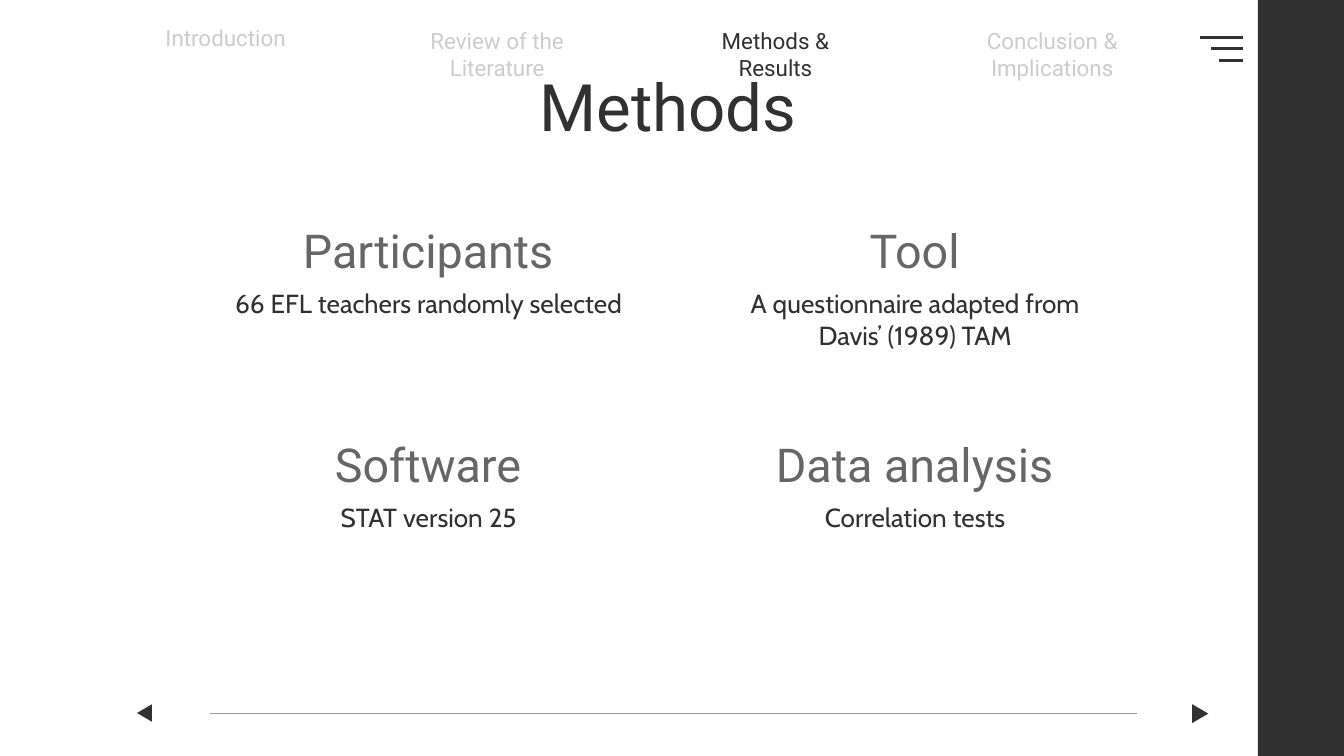
from dataclasses import dataclass

from lxml import etree
from pptx import Presentation
from pptx.dml.color import RGBColor
from pptx.enum.shapes import MSO_CONNECTOR, MSO_SHAPE
from pptx.enum.text import MSO_ANCHOR, PP_ALIGN
from pptx.oxml.ns import qn
from pptx.util import Inches, Pt

STRAIGHT = MSO_CONNECTOR.STRAIGHT
RECT, TRIANGLE = MSO_SHAPE.RECTANGLE, MSO_SHAPE.ISOSCELES_TRIANGLE
TOP, MIDDLE = MSO_ANCHOR.TOP, MSO_ANCHOR.MIDDLE
CENTER = PP_ALIGN.CENTER

SLIDE_W = 10
SLIDE_H = SLIDE_W * 9 / 16

DARK = RGBColor(0x31, 0x31, 0x31)
GRAY = RGBColor(0x66, 0x66, 0x66)
RULE = RGBColor(0x99, 0x99, 0x99)
PALE = RGBColor(0xCC, 0xCC, 0xCC)
WHITE = RGBColor(0xFF, 0xFF, 0xFF)
HEAD_FONT, BODY_FONT = "Roboto", "Cabin"


@dataclass
class Style:
    font: str
    size: float
    color: RGBColor
    anchor: MSO_ANCHOR = TOP
    inset: float = 0.1


@dataclass
class Topic:
    heading: str
    detail: str


@dataclass
class NavItem:
    label: str
    left: float
    top: float = 0.1
    active: bool = False


TITLE = Style(HEAD_FONT, 35, DARK)
HEADING = Style(HEAD_FONT, 25, GRAY, MIDDLE, 0)
DETAIL = Style(BODY_FONT, 14, DARK)
NAV = Style(HEAD_FONT, 12, PALE)
NAV_ACTIVE = Style(HEAD_FONT, 12, DARK)

TOPICS = [
    Topic("Participants", "66 EFL teachers randomly selected"),
    Topic("Tool", "A questionnaire adapted from Davis’ (1989) TAM"),
    Topic("Software", "STAT version 25"),
    Topic("Data analysis", "Correlation tests"),
]
NAV_ITEMS = [
    NavItem("Introduction", 0.9, 0.08),
    NavItem("Review of the Literature", 2.92),
    NavItem("Methods & Results", 4.99, active=True),
    NavItem("Conclusion & Implications", 7.05),
]


def add_text(s, text: str, x: float, y: float, w: float, h: float, style: Style) -> None:
    tf = s.shapes.add_textbox(Inches(x), Inches(y), Inches(w), Inches(h)).text_frame
    tf.word_wrap = True
    tf.vertical_anchor = style.anchor
    tf.margin_left = tf.margin_right = Inches(style.inset)
    tf.margin_top = tf.margin_bottom = Inches(style.inset)
    p = tf.paragraphs[0]
    p.alignment = CENTER
    r = p.add_run()
    r.text = text
    r.font.name = style.font
    r.font.size = Pt(style.size)
    r.font.color.rgb = style.color


def add_line(s, x1: float, x2: float, y: float, color: RGBColor, width: float) -> None:
    line = s.shapes.add_connector(STRAIGHT, Inches(x1), Inches(y), Inches(x2), Inches(y))
    line.line.color.rgb = color
    line.line.width = Pt(width)
    etree.SubElement(line._element.spPr, qn("a:effectLst"))


def add_solid(s, kind: MSO_SHAPE, x: float, y: float, w: float, h: float,
              rotation: float = 0) -> None:
    sp = s.shapes.add_shape(kind, Inches(x), Inches(y), Inches(w), Inches(h))
    sp.shadow.inherit = False
    sp.fill.solid()
    sp.fill.fore_color.rgb = DARK
    sp.line.fill.background()
    sp.rotation = rotation


def main() -> None:
    prs = Presentation()
    prs.slide_width, prs.slide_height = Inches(SLIDE_W), Inches(SLIDE_H)
    s = prs.slides.add_slide(prs.slide_layouts[6])
    s.background.fill.solid()
    s.background.fill.fore_color.rgb = WHITE

    # Footer rule and side band
    add_line(s, 1.56, 8.46, 5.31, RULE, 0.75)
    add_solid(s, RECT, 9.36, 0, 0.64, SLIDE_H)

    # Title
    add_text(s, "Methods", 0.9, 0.39, 8.14, 0.57, TITLE)

    # Two-by-two grid of topics
    for i, topic in enumerate(TOPICS):
        row, col = divmod(i, 2)
        x, y = 1.65 + col * 3.62, 1.64 + row * 1.59
        add_text(s, topic.heading, x + 0.08, y, 2.91, 0.44, HEADING)
        add_text(s, topic.detail, x, y + 0.4, 3.08, 0.88, DETAIL)

    # Previous and next arrows
    add_solid(s, TRIANGLE, 1.01, 5.25, 0.13, 0.11, 270)
    add_solid(s, TRIANGLE, 8.86, 5.25, 0.14, 0.12, 90)

    # Menu icon
    for x, y in ((8.93, 0.28), (9.01, 0.36), (9.07, 0.45)):
        add_line(s, x, 9.25, y, DARK, 1.5)

    # Navigation bar
    for item in NAV_ITEMS:
        add_text(s, item.label, item.left, item.top, 1.56, 0.44,
                 NAV_ACTIVE if item.active else NAV)

    prs.save("out.pptx")


if __name__ == "__main__":
    main()
